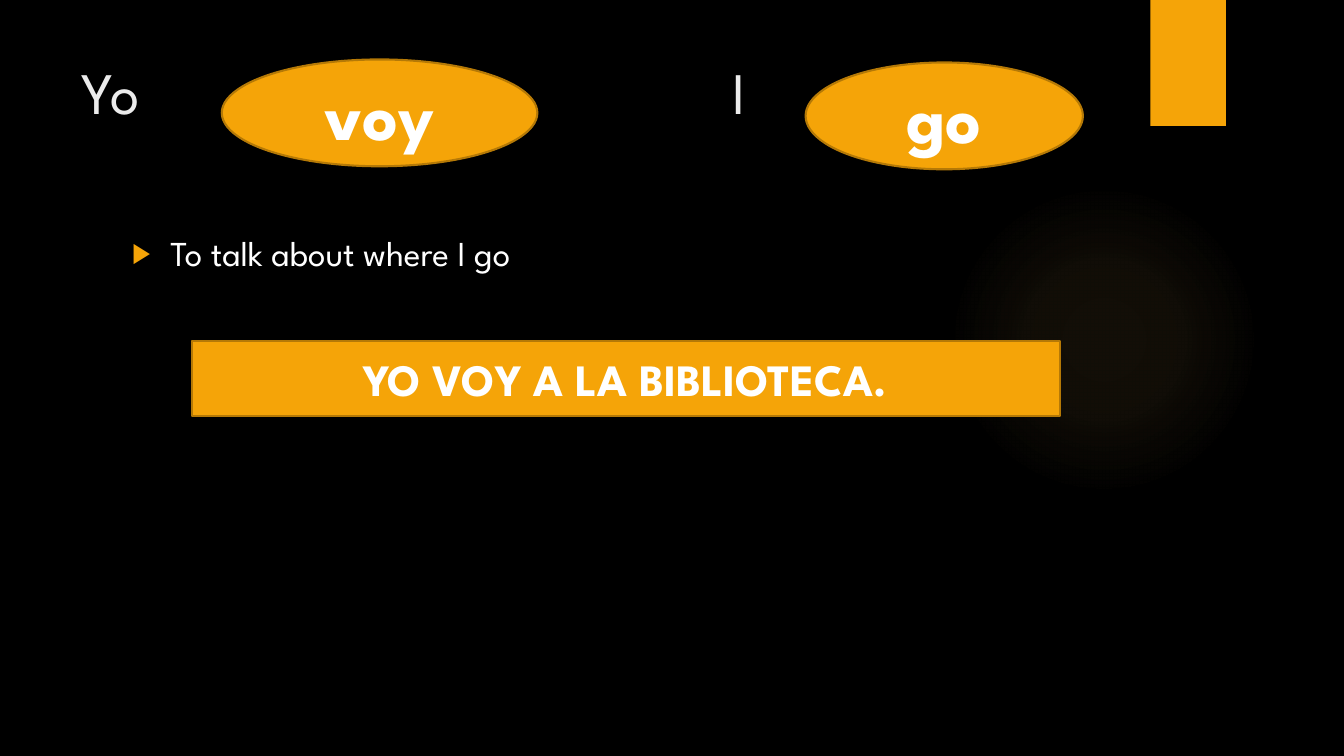
import lxml.etree
import pptx
import pptx.dml.color
import pptx.enum.shapes
import pptx.enum.text
import pptx.oxml
import pptx.oxml.ns
import pptx.util

Inches = pptx.util.Inches
RGBColor = pptx.dml.color.RGBColor
SHAPES = pptx.enum.shapes.MSO_SHAPE
ANCHOR = pptx.enum.text.MSO_ANCHOR
ALIGN = pptx.enum.text.PP_ALIGN

FONT = "League Spartan"
BLACK = RGBColor(0x00, 0x00, 0x00)
WHITE = RGBColor(0xFF, 0xFF, 0xFF)
PALE = RGBColor(0xEB, 0xEB, 0xEB)
AMBER = RGBColor(0xF5, 0xA4, 0x08)
BROWN = RGBColor(0xB5, 0x79, 0x06)
GLOW = RGBColor(0xFA, 0xC9, 0x6A)
GLOW_STOPS = [(0, 7), (36, 6), (69, 0)]  # position and opacity in percent


def add_span(para, text, size, color, bold=False):
    span = para.add_run()
    span.text = text
    span.font.name = FONT
    span.font.size = pptx.util.Pt(size)
    span.font.color.rgb = color
    span.font.bold = bold


def add_plain_shape(page, kind, left, top, width, height):
    shape = page.shapes.add_shape(
        kind, Inches(left), Inches(top), Inches(width), Inches(height))
    shape.shadow.inherit = False
    shape.fill.solid()
    shape.fill.fore_color.rgb = AMBER
    shape.line.fill.background()
    return shape


def add_label(page, kind, left, top, width, height, text, size):
    label = add_plain_shape(page, kind, left, top, width, height)
    label.line.color.rgb = BROWN
    label.line.width = pptx.util.Pt(1.5)
    label.text_frame.vertical_anchor = ANCHOR.MIDDLE
    para = label.text_frame.paragraphs[0]
    para.alignment = ALIGN.CENTER
    add_span(para, text, size, WHITE, bold=True)


def set_glow(shape):
    stops = "".join(
        f'<a:gs pos="{position * 1000}"><a:srgbClr val="{GLOW}">'
        f'<a:alpha val="{opacity * 1000}"/></a:srgbClr></a:gs>'
        for position, opacity in GLOW_STOPS)
    gradient = pptx.oxml.parse_xml(
        f'<a:gradFill {pptx.oxml.ns.nsdecls("a")}><a:gsLst>{stops}</a:gsLst>'
        '<a:path path="circle"><a:fillToRect l="50000" t="50000" r="50000" b="50000"/>'
        '</a:path></a:gradFill>')
    properties = shape.element.spPr
    solid = properties.find(pptx.oxml.ns.qn("a:solidFill"))
    properties.replace(solid, gradient)


def add_decoration(page):
    glow = add_plain_shape(page, SHAPES.OVAL, 9.41, 1.83, 3.08, 3.08)
    set_glow(glow)
    ribbon = add_plain_shape(page, SHAPES.RECTANGLE, 11.41, 0, 0.75, 1.25)
    # Send both behind the placeholders
    for shape in (ribbon, glow):
        page.shapes.element.insert(2, shape.element)


def place_text(box, left, top, width, height):
    box.left, box.top = Inches(left), Inches(top)
    box.width, box.height = Inches(width), Inches(height)
    frame = box.text_frame
    frame.word_wrap = True
    frame.auto_size = pptx.enum.text.MSO_AUTO_SIZE.NONE
    frame.vertical_anchor = ANCHOR.TOP
    para = frame.paragraphs[0]
    para.alignment = ALIGN.LEFT
    para.space_before = pptx.util.Pt(0)
    return para


def add_tab_stop(para, position):
    tabs = pptx.oxml.ns.qn("a:tabLst")
    tab = pptx.oxml.ns.qn("a:tab")
    tab_list = lxml.etree.SubElement(para._p.get_or_add_pPr(), tabs)
    lxml.etree.SubElement(tab_list, tab, pos=str(Inches(position)), algn="l")


def set_bullet(para, indent):
    properties = para._p.get_or_add_pPr()
    properties.set("marL", str(Inches(indent)))
    properties.set("indent", str(-Inches(indent)))
    namespace = pptx.oxml.ns.nsdecls("a")
    for markup in (
            f'<a:buClr {namespace}><a:srgbClr val="{AMBER}"/></a:buClr>',
            f'<a:buSzPct {namespace} val="80000"/>',
            f'<a:buFont {namespace} typeface="Arial"/>',
            f'<a:buChar {namespace} char="▶"/>'):
        properties.append(pptx.oxml.parse_xml(markup))


def main():
    deck = pptx.Presentation()
    deck.slide_width, deck.slide_height = Inches(13.33), Inches(7.5)
    page = deck.slides.add_slide(deck.slide_layouts[1])
    page.background.fill.solid()
    page.background.fill.fore_color.rgb = BLACK
    add_decoration(page)

    # Title: the two pronouns
    title = place_text(page.shapes.title, 0.71, 0.5, 10.29, 1.53)
    add_tab_stop(title, 6.46)
    add_span(title, "Yo\tI", 42, PALE)

    # Body: the use of the verb
    body = place_text(page.placeholders[1], 1.21, 2.25, 9.78, 4.59)
    set_bullet(body, 0.38)
    add_span(body, "To talk about where I go", 25, WHITE)

    # Verb forms and example sentence
    add_label(page, SHAPES.OVAL, 2.2, 0.59, 3.13, 1.06, "voy", 50)
    add_label(page, SHAPES.RECTANGLE, 1.9, 3.38, 8.61, 0.75,
              "YO VOY A LA BIBLIOTECA.", 32)
    add_label(page, SHAPES.OVAL, 7.99, 0.62, 2.75, 1.06, "go", 50)

    deck.save("out.pptx")


if __name__ == "__main__":
    main()
